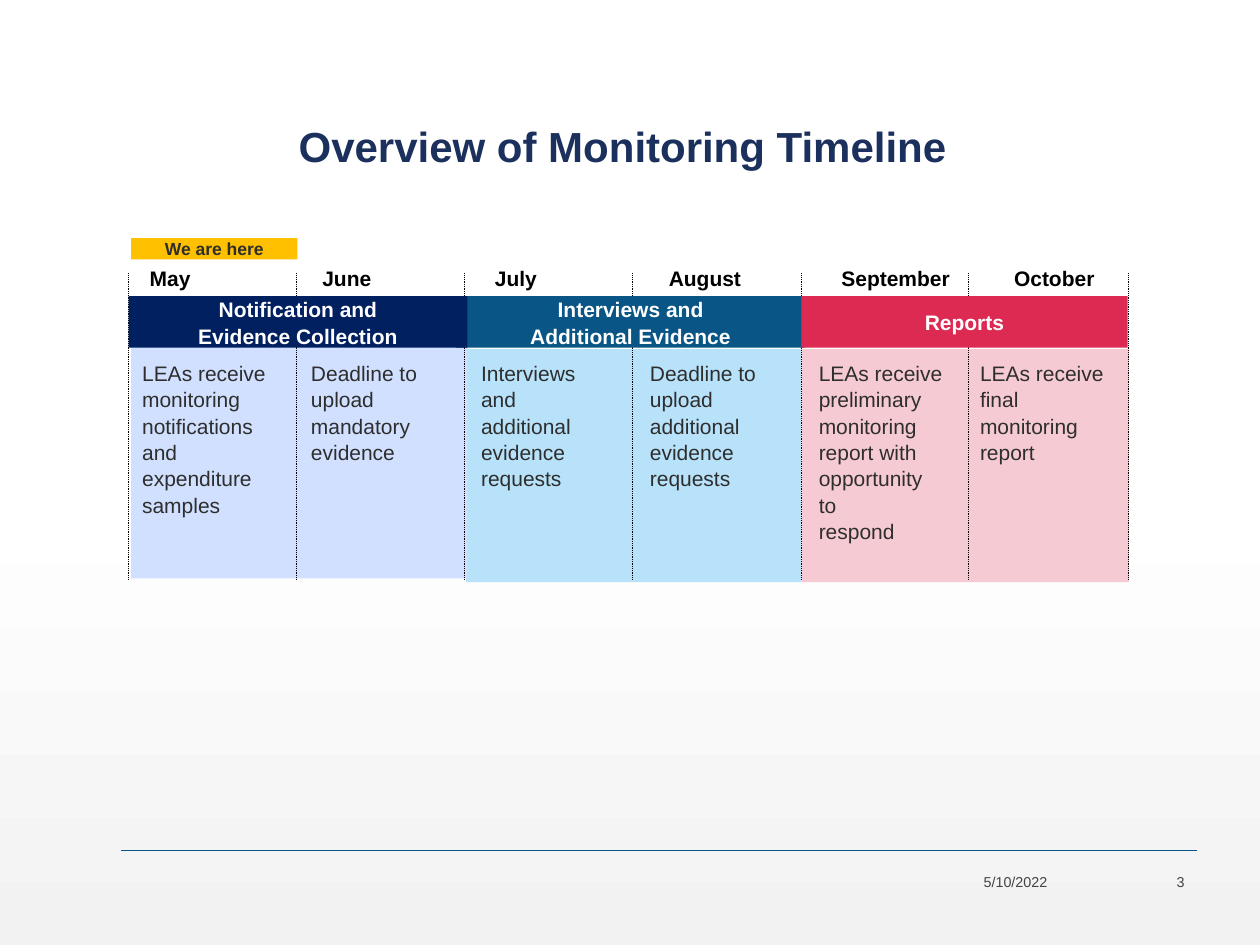
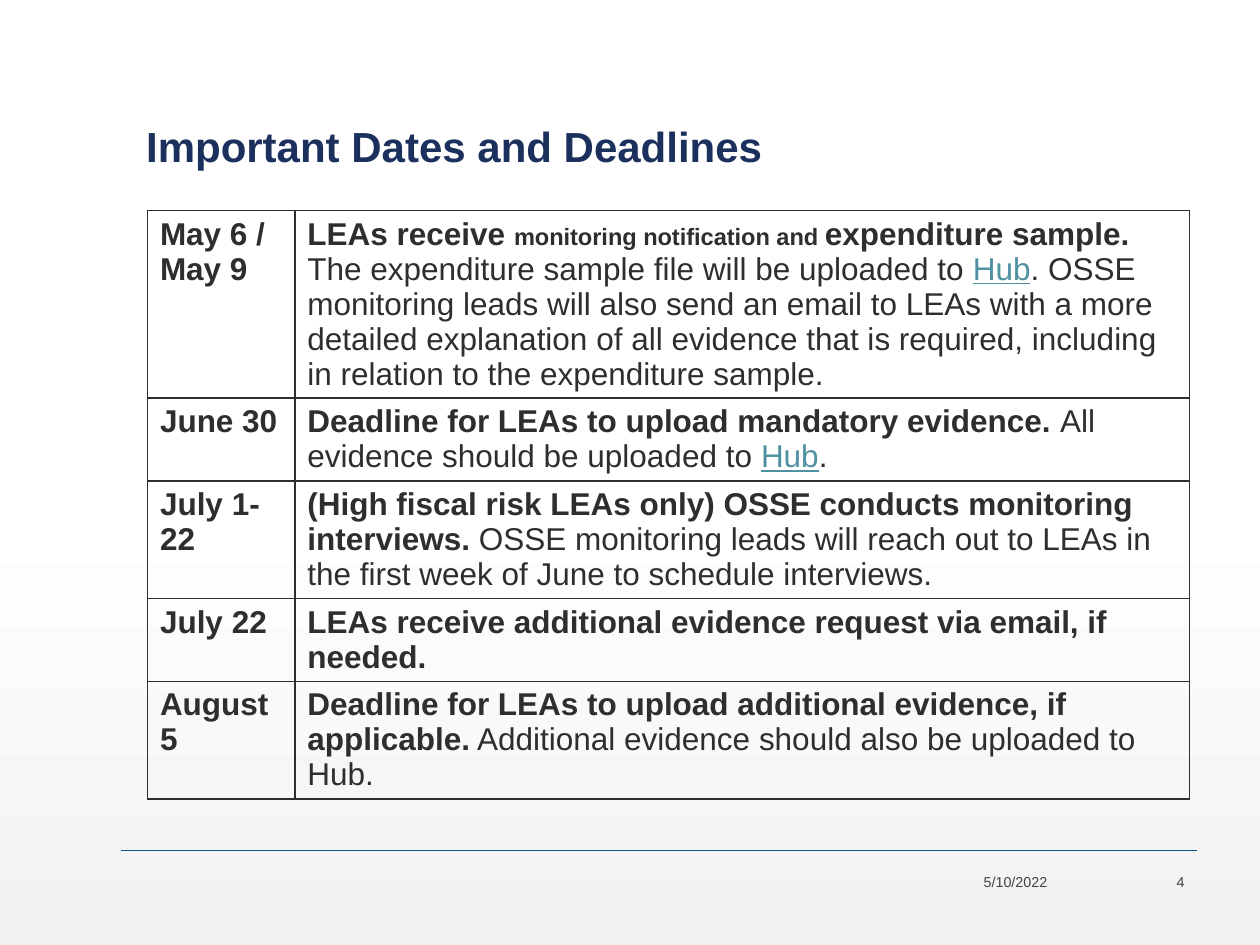
import copy
from dataclasses import dataclass
from typing import NamedTuple

import pptx
import pptx.dml.color
import pptx.enum.dml
import pptx.enum.shapes
import pptx.enum.text
import pptx.oxml
import pptx.oxml.ns
import pptx.util

PX = 9144  # EMU per px, 100 px to the inch
FONT = "Arial"
COLORS = {
    "title": "1B305C", "text": "2D2E2D", "footer": "424342", "rule": "095586",
    "black": "000000", "white": "FFFFFF", "gray": "F2F2F2", "link": "4F91A1",
    "here": "FFC000", "navy": "002060", "blue": "095586", "red": "DC2A52",
    "pale_navy": "D1E0FF", "pale_blue": "B8E1FA", "pale_red": "F6CAD3",
}
ALIGN = pptx.enum.text.PP_ALIGN
ANCHOR = pptx.enum.text.MSO_ANCHOR
AUTO = pptx.enum.text.MSO_AUTO_SIZE


class Area(NamedTuple):
    left: int
    top: int
    width: int
    height: int

    def emu(self) -> list[int]:
        return [value * PX for value in self]


@dataclass
class TextStyle:
    size: float = 12
    color: str = "text"
    bold: bool = False
    align: ALIGN = ALIGN.LEFT
    anchor: ANCHOR = ANCHOR.TOP
    spacing: float | None = None
    wrap: bool = True
    inset_y: int = 5
    auto_size: AUTO = AUTO.NONE


@dataclass
class Phase:
    name: str
    color: str
    panel_color: str
    band: Area
    panel: Area


@dataclass
class Month:
    name: str
    note: str
    note_left: int


class Span(NamedTuple):
    text: str
    bold: bool = False
    size: float = 18
    link: bool = False


TITLE = TextStyle(24, "title", True, anchor=ANCHOR.BOTTOM, spacing=0.9)
FOOTER = TextStyle(8.2, "footer", align=ALIGN.RIGHT, anchor=ANCHOR.MIDDLE)
MONTH = TextStyle(12, "black", True, anchor=ANCHOR.MIDDLE)
BAND = TextStyle(12, "white", True, ALIGN.CENTER, ANCHOR.MIDDLE, 1.05)
NOTE = TextStyle(spacing=1.05, wrap=False, auto_size=AUTO.SHAPE_TO_FIT_TEXT)
HERE = TextStyle(10, bold=True, align=ALIGN.CENTER, wrap=False, inset_y=0,
                 auto_size=AUTO.SHAPE_TO_FIT_TEXT)

PHASES = [
    Phase("Interviews and\vAdditional Evidence", "blue", "pale_blue",
          Area(362, 235, 277, 41), Area(370, 277, 266, 185)),
    Phase("Reports", "red", "pale_red",
          Area(636, 235, 259, 41), Area(636, 277, 260, 185)),
    Phase("Notification and\vEvidence Collection", "navy", "pale_navy",
          Area(102, 235, 269, 41), Area(104, 274, 267, 185)),
]
MONTHS = [
    Month("May", "LEAs receive\vmonitoring\nnotifications\vand\vexpenditure\vsamples", 103),
    Month("June", "Deadline to\vupload\vmandatory\vevidence", 237),
    Month("July", "Interviews and\vadditional\vevidence\vrequests", 372),
    Month("August", "Deadline to\vupload\vadditional\vevidence\vrequests", 506),
    Month("September", "LEAs receive\vpreliminary\vmonitoring\vreport with\v"
          "opportunity to\nrespond", 640),
    Month("October", "LEAs receive\vfinal\vmonitoring\vreport", 768),
]
DEADLINES = [
    ("May 6 / May 9", [
        Span("LEAs receive ", True),
        Span("monitoring notification and ", True, 13.5),
        Span("expenditure sample.", True),
        Span(" The expenditure sample file will be uploaded to "),
        Span("Hub", link=True),
        Span(". OSSE monitoring leads will also send an email to LEAs with a more "
             "detailed explanation of all evidence that is required, including in "
             "relation to the expenditure sample."),
    ]),
    ("June 30", [
        Span("Deadline for LEAs to upload mandatory evidence. ", True),
        Span("All evidence should be uploaded to "),
        Span("Hub", link=True),
        Span("."),
    ]),
    ("July 1-22", [
        Span("(High fiscal risk LEAs only) OSSE conducts monitoring interviews. ", True),
        Span("OSSE monitoring leads will reach out to LEAs in the first week of June "
             "to schedule interviews."),
    ]),
    ("July 22", [
        Span("LEAs receive additional evidence request via email, if needed.", True),
    ]),
    ("August 5", [
        Span("Deadline for LEAs to upload additional evidence, if applicable.", True),
        Span(" Additional evidence should also be uploaded to Hub."),
    ]),
]


def rgb(name: str) -> pptx.dml.color.RGBColor:
    return pptx.dml.color.RGBColor.from_string(COLORS[name])


def write(shape, text: str, style: TextStyle) -> None:
    frame = shape.text_frame
    frame.text = text
    frame.word_wrap = style.wrap
    frame.auto_size = style.auto_size
    frame.vertical_anchor = style.anchor
    frame.margin_left = frame.margin_right = 10 * PX
    frame.margin_top = frame.margin_bottom = style.inset_y * PX
    for para in frame.paragraphs:
        para.alignment = style.align
        para.line_spacing = style.spacing
        para.font.name = FONT
        para.font.size = pptx.util.Pt(style.size)
        para.font.bold = style.bold
        para.font.color.rgb = rgb(style.color)


def add_label(page, area: Area, text: str, style: TextStyle) -> None:
    write(page.shapes.add_textbox(*area.emu()), text, style)


def add_block(page, area: Area, color: str, text: str = "",
              style: TextStyle = BAND) -> None:
    block = page.shapes.add_shape(pptx.enum.shapes.MSO_SHAPE.RECTANGLE, *area.emu())
    block.shadow.inherit = False
    block.fill.solid()
    block.fill.fore_color.rgb = rgb(color)
    block.line.fill.background()
    if text:
        write(block, text, style)


def add_line(page, start: tuple[int, int], end: tuple[int, int], color: str,
             width: float, dotted: bool = False) -> None:
    line = page.shapes.add_connector(
        pptx.enum.shapes.MSO_CONNECTOR.STRAIGHT,
        *[value * PX for value in (*start, *end)])
    line.line.color.rgb = rgb(color)
    line.line.width = pptx.util.Pt(width)
    if dotted:
        line.line.dash_style = pptx.enum.dml.MSO_LINE.ROUND_DOT
    properties = line._element.spPr
    properties.append(properties.makeelement(pptx.oxml.ns.qn("a:effectLst"), {}))


def set_background(deck) -> None:
    """White fading to light gray, shared through the master."""
    fill = deck.slide_master.background.fill
    fill.gradient()
    fill.gradient_angle = 270
    stops = deck.slide_master.element.find(".//" + pptx.oxml.ns.qn("a:gsLst"))
    stops.insert(1, copy.deepcopy(stops[0]))
    looks = [(0, "white"), (0.53, "white"), (1, "gray")]
    for stop, (position, color) in zip(fill.gradient_stops, looks):
        stop.position = position
        stop.color.rgb = rgb(color)


def add_page(deck, title: str, title_left: int, number: int):
    page = deck.slides.add_slide(deck.slide_layouts[5])
    box = page.shapes.title
    box.left, box.top, box.width, box.height = Area(title_left, 38, 788, 103).emu()
    write(box, title, TITLE)
    # Footer
    add_line(page, (96, 675), (950, 675), "rule", 1)
    add_label(page, Area(762, 688, 79, 24), "5/10/2022", FOOTER)
    add_label(page, Area(875, 688, 75, 24), str(number), FOOTER)
    return page


def build_timeline(deck) -> None:
    page = add_page(deck, "Overview of Monitoring Timeline", 227, 3)
    for phase in PHASES:
        add_block(page, phase.panel, phase.panel_color)
    # Month columns
    for index, month in enumerate(MONTHS):
        add_label(page, Area(109 + round(137.2 * index), 206, 134, 30), month.name, MONTH)
        note_height = 11 + 20 * (1 + month.note.count("\v") + month.note.count("\n"))
        add_label(page, Area(month.note_left, 280, 120, note_height), month.note, NOTE)
    separators = [102 + round(133.4 * index) for index in range(len(MONTHS))] + [896]
    for x in separators:
        add_line(page, (x, 217), (x, 460), "black", 0.5, dotted=True)
    # Current position and phase bands
    add_block(page, Area(104, 189, 132, 17), "here", "We are here", HERE)
    for phase in PHASES:
        add_block(page, phase.band, phase.color, phase.name)


def add_borders(cell) -> None:
    properties = cell._tc.get_or_add_tcPr()
    for side in ("lnL", "lnR", "lnT", "lnB"):
        properties.append(pptx.oxml.parse_xml(
            f'<a:{side} {pptx.oxml.ns.nsdecls("a")} w="12700"><a:solidFill>'
            f'<a:srgbClr val="{COLORS["text"]}"/></a:solidFill></a:{side}>'))


def fill_cell(cell, spans: list[Span]) -> None:
    add_borders(cell)
    cell.fill.background()
    para = cell.text_frame.paragraphs[0]
    para.line_spacing = pptx.util.Pt(20)
    para.font.name = FONT
    for span in spans:
        run = para.add_run()
        run.text = span.text
        run.font.name = FONT
        run.font.size = pptx.util.Pt(span.size)
        run.font.bold = span.bold
        run.font.underline = span.link
        run.font.color.rgb = rgb("link" if span.link else "text")


def build_deadlines(deck) -> None:
    page = add_page(deck, "Important Dates and Deadlines", 106, 4)
    row_height = 47  # rows grow to fit their text
    area = Area(117, 167, 827, row_height * len(DEADLINES))
    table = page.shapes.add_table(len(DEADLINES), 2, *area.emu()).table
    table.first_row = table.horz_banding = False
    for column, width in zip(table.columns, (117, 710)):
        column.width = width * PX
    for index, (date, spans) in enumerate(DEADLINES):
        fill_cell(table.cell(index, 0), [Span(date, True)])
        fill_cell(table.cell(index, 1), spans)


def main() -> None:
    deck = pptx.Presentation()
    deck.slide_width, deck.slide_height = 1000 * PX, 750 * PX
    set_background(deck)
    build_timeline(deck)
    build_deadlines(deck)
    deck.save("out.pptx")


if __name__ == "__main__":
    main()
